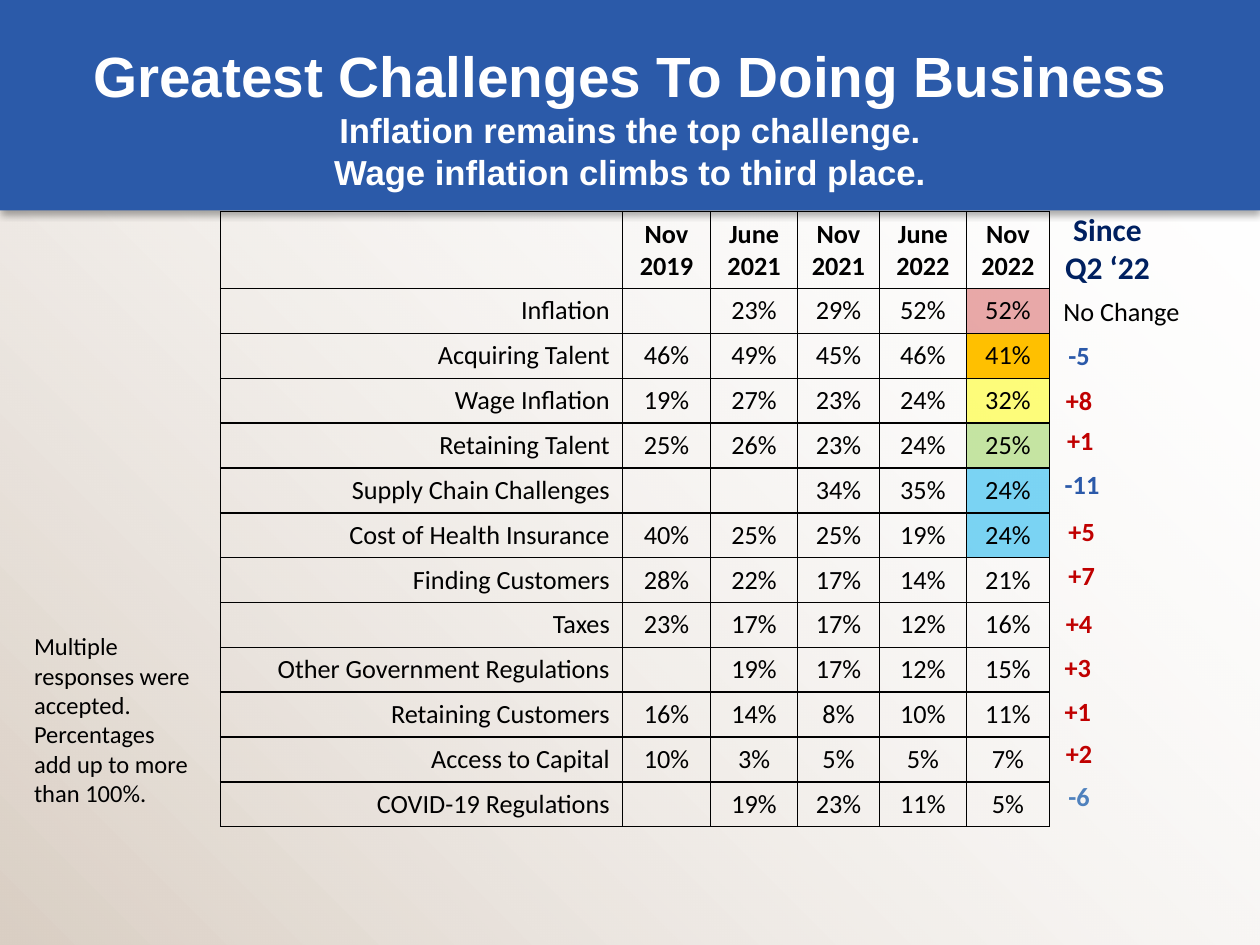
from copy import deepcopy

from lxml import etree
from pptx import Presentation
from pptx.dml.color import RGBColor
from pptx.enum.shapes import MSO_SHAPE
from pptx.enum.text import MSO_ANCHOR, MSO_AUTO_SIZE, PP_ALIGN
from pptx.oxml.ns import qn
from pptx.util import Inches, Pt

RECTANGLE = MSO_SHAPE.RECTANGLE
MIDDLE = MSO_ANCHOR.MIDDLE
FIXED, GROW = MSO_AUTO_SIZE.NONE, MSO_AUTO_SIZE.SHAPE_TO_FIT_TEXT
LEFT, CENTER, RIGHT = PP_ALIGN.LEFT, PP_ALIGN.CENTER, PP_ALIGN.RIGHT

# The grid has 100 columns and 75 rows
COLUMNS, ROWS = 100, 75
COLORS = {
    "sand": "DACFC4", "white": "FFFFFF", "black": "000000", "banner": "2B5AA9",
    "navy": "002060", "fall": "2B59A9", "rise": "C00000", "pale fall": "4F81BD",
    "red": "C00000", "orange": "FFC000", "yellow": "FFFF00",
    "green": "92D050", "blue": "00B0F0",
}

HEADINGS = ["", "Nov 2019", "June 2021", "Nov\n2021", "June\n2022", "Nov\n2022"]
CHALLENGES = [
    ("Inflation", "", "23%", "29%", "52%", "52%"),
    ("Acquiring Talent", "46%", "49%", "45%", "46%", "41%"),
    ("Wage Inflation", "19%", "27%", "23%", "24%", "32%"),
    ("Retaining Talent", "25%", "26%", "23%", "24%", "25%"),
    ("Supply Chain Challenges", "", "", "34%", "35%", "24%"),
    ("Cost of Health Insurance", "40%", "25%", "25%", "19%", "24%"),
    ("Finding Customers", "28%", "22%", "17%", "14%", "21%"),
    ("Taxes", "23%", "17%", "17%", "12%", "16%"),
    ("Other Government Regulations", "", "19%", "17%", "12%", "15%"),
    ("Retaining Customers", "16%", "14%", "8%", "10%", "11%"),
    ("Access to Capital", "10%", "3%", "5%", "5%", "7%"),
    ("COVID-19 Regulations", "", "19%", "23%", "11%", "5%"),
]
# Fill and opacity of the last column, from the top challenge down
HIGHLIGHTS = [("red", 33), ("orange", 100), ("yellow", 51),
              ("green", 51), ("blue", 51), ("blue", 51)]
# Wording, colour, left, top and width of each change
CHANGES = [
    ("No Change", "black", 83.9, 22.9, 10.8), ("-5", "fall", 84.3, 26.4, 4.1),
    ("+8", "rise", 84.1, 30, 5.2), ("+1", "rise", 84.2, 33.2, 5.3),
    ("-11", "fall", 84, 36.7, 4.1), ("+5", "rise", 84.3, 40.4, 5.2),
    ("+7", "rise", 84.3, 43.9, 4.1), ("+4", "rise", 84.1, 47.7, 4.1),
    ("+3", "rise", 84, 51.2, 4.1), ("+1", "rise", 84, 54.7, 4.1),
    ("+2", "rise", 84.1, 58, 4.1), ("-6", "pale fall", 84.3, 61.4, 4.1),
]


def rgb(color):
    return RGBColor.from_string(COLORS[color])


def add_xml(parent, tag, **attributes):
    return etree.SubElement(parent, qn(tag), {k: str(v) for k, v in attributes.items()})


def set_opacity(color_element, percent):
    add_xml(color_element, "a:alpha", val=percent * 1000)


def write(paragraph, text, size=15, color="black", bold=False, font="Calibri", align=LEFT):
    """Write lines into one paragraph, with line breaks of the same format."""
    paragraph.alignment = align
    for number, line in enumerate(text.split("\n")):
        if number:
            paragraph.add_line_break()
            paragraph._p[-1].append(deepcopy(run._r.rPr))
        run = paragraph.add_run()
        run.text = line
        run.font.size, run.font.name, run.font.bold = Pt(size), font, bold
        run.font.color.rgb = rgb(color)


class SlideBuilder:
    def __init__(self, deck):
        self.slide = deck.slides.add_slide(deck.slide_layouts[5])
        self.shapes = self.slide.shapes
        self.column = deck.slide_width / COLUMNS
        self.row = deck.slide_height / ROWS

    def place(self, left, top, width, height):
        return (int(left * self.column), int(top * self.row),
                int(width * self.column), int(height * self.row))

    def panel(self, *area):
        panel = self.shapes.add_shape(RECTANGLE, *self.place(*area))
        panel.shadow.inherit = False
        panel.line.fill.background()
        return panel

    def backdrop(self, *area):
        fill = self.panel(*area).fill
        fill.gradient()
        fill.gradient_angle = 45
        for stop, color, position in zip(fill.gradient_stops, ("sand", "white"), (0, 1)):
            stop.color.rgb = rgb(color)
            stop.position = position
        set_opacity(stop._gs[0], 0)

    def banner(self, *area):
        banner = self.panel(*area)
        banner.fill.solid()
        banner.fill.fore_color.rgb = rgb("banner")
        effects = banner._element.spPr.find(qn("a:effectLst"))
        shadow = add_xml(effects, "a:outerShdw", blurRad=Pt(4), dist=Pt(2.2),
                         dir=90 * 60000, rotWithShape=0)
        set_opacity(add_xml(shadow, "a:srgbClr", val=COLORS["black"]), 32)

    def set_frame(self, frame, auto_size):
        frame.word_wrap = True
        frame.auto_size = auto_size
        frame.margin_left = frame.margin_right = Inches(0.05)
        frame.margin_top = frame.margin_bottom = Inches(0.05)
        return frame.paragraphs[0]

    def title(self, heading, subheading, *area):
        title = self.shapes.title
        title.left, title.top, title.width, title.height = self.place(*area)
        self.shapes._spTree.append(title._element)  # bring in front of the banner
        paragraph = self.set_frame(title.text_frame, FIXED)
        title.text_frame.vertical_anchor = MIDDLE
        style = {"font": "Arial", "color": "white", "bold": True, "align": CENTER}
        write(paragraph, heading, size=32.4, **style)
        paragraph.add_line_break()
        paragraph._p[-1].append(deepcopy(paragraph.runs[0]._r.rPr))
        write(paragraph, subheading, size=19.8, **style)

    def label(self, text, *area, **style):
        box = self.shapes.add_textbox(*self.place(*area))
        write(self.set_frame(box.text_frame, GROW), text, **style)

    def border(self, cell):
        properties = cell._tc.get_or_add_tcPr()
        for index, side in enumerate(("a:lnL", "a:lnR", "a:lnT", "a:lnB")):
            line = etree.Element(qn(side), w=str(Pt(1)))
            add_xml(add_xml(line, "a:solidFill"), "a:srgbClr", val=COLORS["black"])
            properties.insert(index, line)

    def cell(self, cell, text, highlight=None, **style):
        cell.vertical_anchor = MIDDLE
        if highlight:
            color, opacity = highlight
            cell.fill.solid()
            cell.fill.fore_color.rgb = rgb(color)
            if opacity < 100:
                set_opacity(cell._tc.tcPr.find(".//" + qn("a:srgbClr")), opacity)
        else:
            cell.fill.background()
        self.border(cell)
        frame = cell.text_frame
        if not text:
            frame.paragraphs[0]._p.get_or_add_endParaRPr().set("sz", "1500")
            return
        for number, line in enumerate(text.split("\n")):
            paragraph = frame.add_paragraph() if number else frame.paragraphs[0]
            write(paragraph, line, **style)

    def table(self, rows, widths, header_height, row_height, left, top):
        height = header_height + row_height * (len(rows) - 1)
        area = self.place(left, top, sum(widths), height)
        table = self.shapes.add_table(len(rows), len(widths), *area).table
        table.first_row = table.horz_banding = False
        for column, width in zip(table.columns, widths):
            column.width = int(width * self.column)
        for r, values in enumerate(rows):
            table.rows[r].height = int((row_height if r else header_height) * self.row)
            for c, value in enumerate(values):
                marked = c == len(widths) - 1 and 0 < r <= len(HIGHLIGHTS)
                self.cell(table.cell(r, c), value,
                          highlight=HIGHLIGHTS[r - 1] if marked else None,
                          bold=r == 0, align=CENTER if c else RIGHT)


def main():
    deck = Presentation()
    deck.slide_width, deck.slide_height = Inches(10), Inches(7.5)
    page = SlideBuilder(deck)

    # Background and heading
    page.backdrop(0, 0, COLUMNS, ROWS)
    page.banner(0, 0, COLUMNS, 16.7)
    page.title("Greatest Challenges To Doing Business",
               "Inflation remains the top challenge.\nWage inflation climbs to third place.",
               5, 3, 90, 12.5)

    # Challenges by survey
    page.table([HEADINGS] + CHALLENGES, [31.9, 7, 6.9, 6.5, 6.9, 6.6],
               6.1, 3.56, 17.5, 16.8)

    # Remark and changes beside the table
    page.label("Multiple responses were accepted. Percentages add up to more than 100%.",
               2.2, 49.6, 13.8, 15.1, size=14)
    page.label("Since Q2 ‘22", 83.6, 16.2, 8.6, 7.1,
               size=18, color="navy", bold=True, align=CENTER)
    for change, color, left, top, width in CHANGES:
        page.label(change, left, top, width, 3.5, color=color, bold=color != "black")

    deck.save("out.pptx")


if __name__ == "__main__":
    main()
